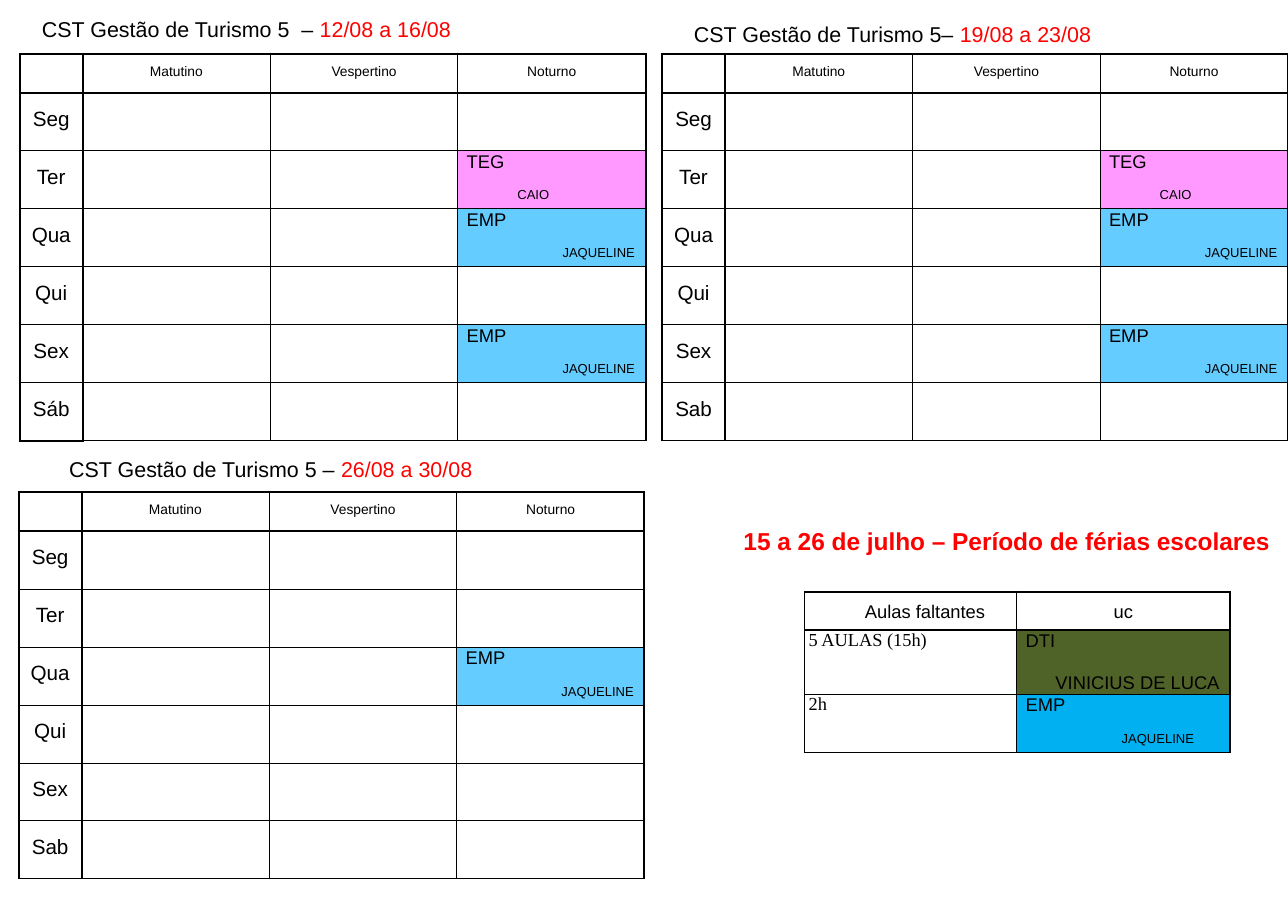
from lxml import etree
from pptx import Presentation
from pptx import util as u
from pptx.dml.color import RGBColor
from pptx.enum import text
from pptx.oxml import ns

COLORS = {
    "ink": "000000",
    "red": "FF0000",
    "pink": "FF99FF",
    "sky": "64CCFF",
    "blue": "00B0F0",
    "olive": "4F6228",
}
THIN, THICK = 0.75, 1.5
HEADER_HEIGHT = 0.35
DAY_WIDTH = 0.57
SHIFTS = ["Matutino", "Vespertino", "Noturno"]
WEEKDAYS = ["Seg", "Ter", "Qua", "Qui", "Sex"]
CENTER = text.PP_ALIGN.CENTER
LEFT = text.PP_ALIGN.LEFT

TEG = ("TEG", "CAIO", 0.54, "pink")
EMP = ("EMP", "JAQUELINE", 0.95, "sky")


def add_span(para, words, size, color="ink", font="Arial", bold=False):
    span = para.add_run()
    span.text = words
    span.font.size = u.Pt(size)
    span.font.name = font
    span.font.bold = bold
    span.font.color.rgb = RGBColor.from_string(COLORS[color])


def indent(para, inches):
    para._p.get_or_add_pPr().set("marL", str(u.Inches(inches)))


def place_heading(shape, box, spans, size=14, bold=False):
    shape.left, shape.top, shape.width, shape.height = map(u.Inches, box)
    frame = shape.text_frame
    frame.word_wrap = True
    frame.auto_size = text.MSO_AUTO_SIZE.NONE
    frame.vertical_anchor = text.MSO_ANCHOR.TOP
    para = frame.paragraphs[0]
    para.alignment = LEFT
    for words, color in spans:
        add_span(para, words, size, color, bold=bold)


def add_heading(page, box, spans, **style):
    place_heading(page.shapes.add_textbox(0, 0, 0, 0), box, spans, **style)


def set_borders(cell, left, right, top, bottom):
    props = cell._tc.get_or_add_tcPr()
    for side, width in zip("LRTB", (left, right, top, bottom)):
        line = etree.SubElement(props, ns.qn(f"a:ln{side}"), w=str(u.Pt(width)))
        fill = etree.SubElement(line, ns.qn("a:solidFill"))
        etree.SubElement(fill, ns.qn("a:srgbClr"), val=COLORS["ink"])


def add_grid(page, box, widths, heights, thick_columns, thick_rows):
    table = page.shapes.add_table(
        len(heights), len(widths), *map(u.Inches, box)
    ).table
    table.first_row = table.horz_banding = False
    for column, width in zip(table.columns, widths):
        column.width = u.Inches(width)
    for row, height in zip(table.rows, heights):
        row.height = u.Inches(height)
    vertical = [THICK if i in thick_columns else THIN for i in range(len(widths) + 1)]
    level = [THICK if i in thick_rows else THIN for i in range(len(heights) + 1)]
    for r in range(len(heights)):
        for c in range(len(widths)):
            cell = table.cell(r, c)
            cell.margin_left = cell.margin_right = 0
            cell.margin_top = cell.margin_bottom = 0
            set_borders(cell, vertical[c], vertical[c + 1], level[r], level[r + 1])
            cell.fill.background()
    return table


def write_label(cell, words, size, top=0, left=0, align=LEFT, font="Arial"):
    cell.margin_top = u.Inches(top)
    para = cell.text_frame.paragraphs[0]
    para.alignment = align
    indent(para, left)
    add_span(para, words, size, font=font)


def write_class(cell, unit, teacher, left, color, size=8.5, gap=10.3):
    cell.fill.solid()
    cell.fill.fore_color.rgb = RGBColor.from_string(COLORS[color])
    write_label(cell, unit, 12, top=0.01, left=0.08)
    para = cell.text_frame.add_paragraph()
    para.space_before = u.Pt(gap)
    indent(para, left)
    add_span(para, teacher, size)


def add_week(page, box, saturday, classes, closed=False):
    days = WEEKDAYS + [saturday]
    shift_width = (box[2] - DAY_WIDTH) / len(SHIFTS)
    day_height = (box[3] - HEADER_HEIGHT) / len(days)
    table = add_grid(
        page,
        box,
        [DAY_WIDTH] + [shift_width] * len(SHIFTS),
        [HEADER_HEIGHT] + [day_height] * len(days),
        thick_columns={0, 1, 4},
        thick_rows={0, 1},
    )
    for column, shift in enumerate(SHIFTS, 1):
        write_label(table.cell(0, column), shift, 9, top=0.09, align=CENTER)
    for row, day in enumerate(days, 1):
        write_label(table.cell(row, 0), day, 13.5, top=0.14, align=CENTER)
        if day in classes:
            write_class(table.cell(row, len(SHIFTS)), *classes[day])
    if closed:
        bottom = table.cell(len(days), 0)._tc.tcPr.find(ns.qn("a:lnB"))
        bottom.set("w", str(u.Pt(THICK)))


def add_missing_classes(page, box):
    table = add_grid(
        page,
        box,
        [box[2] / 2] * 2,
        [HEADER_HEIGHT, 0.58, 0.53],
        thick_columns={2},
        thick_rows={0, 1},
    )
    write_label(table.cell(0, 0), "Aulas faltantes", 12, top=0.09, left=0.55)
    write_label(table.cell(0, 1), "uc", 12, top=0.09, align=CENTER)
    for row, hours in enumerate(["5 AULAS (15h)", "2h"], 1):
        write_label(table.cell(row, 0), hours, 12, left=0.04, font="Times New Roman")
    write_class(
        table.cell(1, 1), "DTI", "VINICIUS DE LUCA", 0.35, "olive", size=12, gap=13.8
    )
    write_class(table.cell(2, 1), "EMP", "JAQUELINE", 0.95, "blue")


def build_schedule(deck):
    page = deck.slides.add_slide(deck.slide_layouts[5])
    course = "CST Gestão de Turismo 5"
    full_week = {"Ter": TEG, "Qua": EMP, "Sex": EMP}

    place_heading(
        page.shapes.title,
        (0.28, 0.1, 3.96, 0.34),
        [(course + "  – ", "ink"), ("12/08 a 16/08", "red")],
    )
    add_week(page, (0.18, 0.49, 5.68, 3.51), "Sáb", full_week, closed=True)

    add_heading(
        page,
        (6.2, 0.14, 3.96, 0.34),
        [(course + "– ", "ink"), ("19/08 a 23/08", "red")],
    )
    add_week(page, (6.01, 0.49, 5.68, 3.51), "Sab", full_week)

    add_heading(
        page,
        (0.53, 4.09, 3.9, 0.34),
        [(course + " – ", "ink"), ("26/08 a 30/08", "red")],
    )
    add_week(page, (0.17, 4.47, 5.68, 3.51), "Sab", {"Qua": EMP})

    add_heading(
        page,
        (6.65, 4.73, 5.04, 0.37),
        [("15 a 26 de julho – Período de férias escolares", "red")],
        size=16,
        bold=True,
    )
    add_missing_classes(page, (7.3, 5.37, 3.86, 1.46))


def main():
    deck = Presentation()
    deck.slide_width = u.Inches(11.69)
    deck.slide_height = u.Inches(8.26)
    build_schedule(deck)
    deck.save("out.pptx")


if __name__ == "__main__":
    main()
